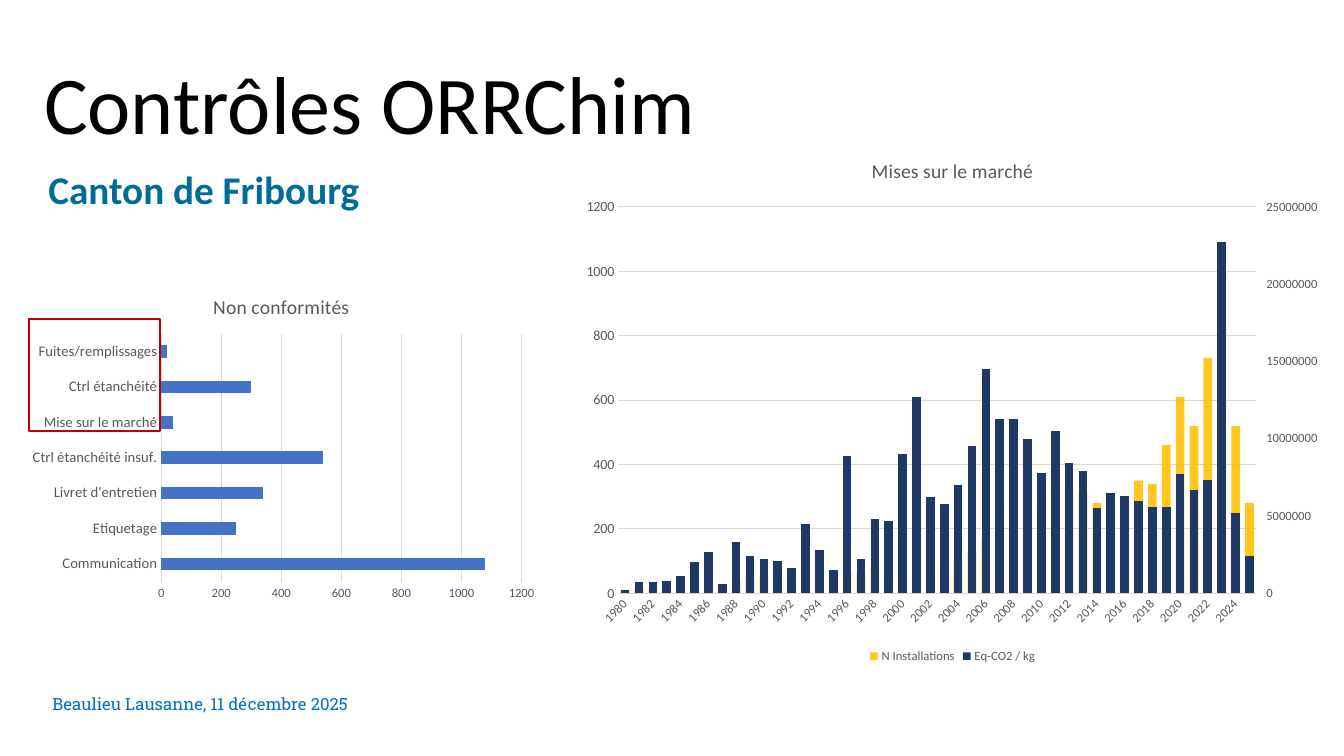
from copy import deepcopy
from dataclasses import dataclass

from pptx import Presentation
from pptx.chart.data import CategoryChartData as ChartData
from pptx.dml.color import RGBColor as RGB
from pptx.enum.chart import XL_CHART_TYPE as Kind, XL_LEGEND_POSITION as Spot, XL_TICK_MARK as Tick
from pptx.enum.shapes import MSO_SHAPE as Shape
from pptx.enum.text import MSO_ANCHOR as Anchor, MSO_AUTO_SIZE as Fit, PP_ALIGN as Align
from pptx.oxml import parse_xml
from pptx.oxml.ns import nsdecls
from pptx.util import Cm, Pt


@dataclass(frozen=True)
class Theme:
    """Colours, fonts and type sizes of the slide."""
    sans: str = "Calibri"
    slab: str = "Roboto Slab"
    black: str = "000000"
    teal: str = "006D94"
    sky: str = "0070C0"
    grey: str = "595959"
    grid: str = "D9D9D9"
    blue: str = "4472C4"
    gold: str = "FFC000"
    navy: str = "203864"
    red: str = "C00000"
    head: float = 58.6
    sub: float = 28
    chart: float = 14
    label: float = 10.5
    value: float = 10
    small: float = 9
    foot: float = 12


T = Theme()
FAULTS = {
    "Communication": 1080, "Etiquetage": 250, "Livret d'entretien": 340,
    "Ctrl étanchéité insuf.": 540, "Mise sur le marché": 40,
    "Ctrl étanchéité": 300, "Fuites/remplissages": 20,
}
YEARS = [str(year) for year in range(1980, 2026)]
UNITS = [
    10, 20, 10, 10, 20, 30, 20, 20, 40, 50, 50, 40, 40, 50, 60, 50,
    60, 60, 80, 60, 80, 90, 100, 90, 100, 130, 170, 220, 260, 270, 260,
    320, 330, 310, 280, 270, 290, 350, 340, 460, 610, 520, 730, 960, 520, 280,
]
TONS = [
    2, 7, 7, 8, 11, 20, 27, 6, 33, 24, 22, 21, 16, 45, 28, 15,
    89, 22, 48, 47, 90, 127, 62, 58, 70, 95, 145, 113, 113, 100, 78,
    105, 84, 79, 55, 65, 63, 60, 56, 56, 77, 67, 73, 227, 52, 24,
]


def style(font, size, tint, face=T.sans, bold=False):
    """Set face, size, colour and weight of a font."""
    font.name, font.size, font.bold = face, Pt(size), bold
    font.color.rgb = RGB.from_string(tint)


def place(item, box):
    """Move a shape to a box given in centimetres."""
    item.left, item.top, item.width, item.height = map(Cm, box)


def write(item, box, text, inset, *look):
    """Place a text shape and fill it with one styled paragraph."""
    place(item, box)
    frame = item.text_frame
    frame.text = text
    frame.word_wrap, frame.auto_size = True, Fit.NONE
    sides = [Cm(side) for side in inset]
    frame.margin_left, frame.margin_top, frame.margin_right, frame.margin_bottom = sides
    para = frame.paragraphs[0]
    para.alignment = Align.LEFT
    style(para.runs[0].font, *look)
    return para


def header(slide, box):
    """Fill the title and the subtitle from the top of the box."""
    x, y, w, h = box
    title, body = slide.placeholders
    para = write(title, box, "Contrôles ORRChim", (.25, .13, .25, .13), T.head, T.black)
    title.text_frame.vertical_anchor = Anchor.MIDDLE
    para.line_spacing = .9
    para = write(body, (x + .36, y + 3.4, w + 2.24, 2.16), "Canton de Fribourg",
                 (0, 0, 0, 0), T.sub, T.teal, T.sans, True)
    props = para._p.get_or_add_pPr()
    props.set("marL", "0")
    props.set("indent", "0")
    props.append(parse_xml(f"<a:buNone {nsdecls('a')}/>"))
    para.line_spacing, para.space_before, para.space_after = .9, Pt(0), Pt(6)


def footer(slide, box):
    """Write the place and date line."""
    item = slide.shapes.add_textbox(0, 0, 0, 0)
    write(item, box, "Beaulieu Lausanne, 11 décembre 2025", (.46, 0, 0, 0),
          T.foot, T.sky, T.slab)


def draw(slide, box, kind, data, title, plot, scale, sizes, gap, tints):
    """Add a bar chart with a title, a fixed plot area and styled axes."""
    chart = slide.shapes.add_chart(kind, *map(Cm, box), data).chart
    style(chart.font, T.value, T.black)
    chart.has_title, chart.has_legend = True, False
    chart.chart_title.include_in_layout = False
    frame = chart.chart_title.text_frame
    frame.text = title
    style(frame.paragraphs[0].runs[0].font, T.chart, T.grey)
    cats, vals = chart.category_axis, chart.value_axis
    for axis, size in zip((cats, vals), sizes):
        axis.major_tick_mark = axis.minor_tick_mark = Tick.NONE
        style(axis.tick_labels.font, size, T.grey)
    vals.minimum_scale, vals.maximum_scale, vals.major_unit = 0, *scale
    vals.format.line.fill.background()
    vals.has_major_gridlines = True
    for line in (cats.format.line, vals.major_gridlines.format.line):
        line.color.rgb, line.width = RGB.from_string(T.grid), Pt(.75)
    bars = chart.plots[0]
    bars.gap_width, bars.vary_by_categories = gap, False
    for row, tint in zip(bars.series, tints):
        row.format.fill.solid()
        row.format.fill.fore_color.rgb = RGB.from_string(tint)
        row.invert_if_negative = False
    area = chart._chartSpace.chart.plotArea
    for old in area.xpath("c:layout"):
        area.remove(old)
    spots = "".join(f'<c:{key} val="{val}"/>' for key, val in zip("xywh", plot))
    area.insert(0, parse_xml(
        f'<c:layout {nsdecls("c")}><c:manualLayout><c:layoutTarget val="inner"/>'
        f'<c:xMode val="edge"/><c:yMode val="edge"/>{spots}</c:manualLayout></c:layout>'))
    return chart


def faults(slide, box):
    """Chart the faults found and frame the top three labels."""
    data = ChartData()
    data.categories = list(FAULTS)
    data.add_series("Series 1", list(FAULTS.values()))
    draw(slide, box, Kind.BAR_CLUSTERED, data, "Non conformités",
         (.27, .17, .69, .76), (1200, 200), (T.label, T.small), 182, [T.blue])
    x, y, w, h = box
    mark = slide.shapes.add_shape(Shape.RECTANGLE, 0, 0, 0, 0)
    place(mark, (x + .23, y + 1.04, 3.3, 2.82))
    mark.shadow.inherit = False
    mark.fill.background()
    mark.line.color.rgb, mark.line.width = RGB.from_string(T.red), Pt(1.5)


def split(chart, top, step):
    """Move the last series of a chart to a second axis on the right."""
    area = chart._chartSpace.chart.plotArea
    bars, cats, vals = (area.xpath(f"c:{tag}")[0] for tag in ("barChart", "catAx", "valAx"))
    twin, base, right = map(deepcopy, (bars, cats, vals))
    bars.remove(bars.xpath("c:ser")[-1])
    twin.remove(twin.xpath("c:ser")[0])
    right.remove(right.xpath("c:majorGridlines")[0])
    ids = {"cat": "5001", "val": "5002"}
    for node, key in zip(twin.xpath("c:axId"), ids.values()):
        node.set("val", key)
    edits = (
        (base, "axId", ids["cat"]), (base, "crossAx", ids["val"]), (base, "delete", "1"),
        (right, "axId", ids["val"]), (right, "crossAx", ids["cat"]), (right, "axPos", "r"),
        (right, "crosses", "max"), (right, "majorTickMark", "out"),
        (right, "scaling/c:max", str(top)), (right, "majorUnit", str(step)),
    )
    for axis, tag, value in edits:
        axis.xpath(f"c:{tag}")[0].set("val", value)
    right.xpath(".//a:defRPr")[0].set("sz", str(int(T.small * 100)))
    bars.addnext(twin)
    vals.addnext(right)
    right.addnext(base)


def market(slide, box):
    """Chart the units and the CO2 load per year on two axes."""
    data = ChartData()
    data.categories = YEARS
    data.add_series("N Installations", UNITS)
    data.add_series("Eq-CO2 / kg", [ton * 100000 for ton in TONS])
    chart = draw(slide, box, Kind.COLUMN_CLUSTERED, data, "Mises sur le marché",
                 (.06, .13, .84, .73), (1200, 200), (T.small, T.value), 60, [T.gold, T.navy])
    chart.plots[0].overlap = 40
    chart.has_legend = True
    chart.legend.position, chart.legend.include_in_layout = Spot.BOTTOM, False
    style(chart.legend.font, T.small, T.grey)
    area = chart._chartSpace.chart.plotArea
    tint = area.xpath("c:barChart/c:ser[1]/c:spPr//a:srgbClr")[0]
    tint.append(parse_xml(f'<a:alpha {nsdecls("a")} val="88000"/>'))
    axis = area.xpath("c:catAx")[0]
    axis.xpath("c:txPr/a:bodyPr")[0].set("rot", "-2700000")
    axis.xpath("c:noMultiLvlLbl")[0].addprevious(
        parse_xml(f'<c:tickLblSkip {nsdecls("c")} val="2"/>'))
    split(chart, 25000000, 5000000)


def main():
    """Build the slide and save it."""
    deck = Presentation()
    deck.slide_width, deck.slide_height = Cm(33.87), Cm(19.05)
    slide = deck.slides.add_slide(deck.slide_layouts[1])
    header(slide, (.86, .89, 29.21, 3.68))
    footer(slide, (.86, 17.48, 9.55, .69))
    faults(slide, (.51, 7.01, 13.16, 8.23))
    market(slide, (14.43, 3.48, 19.15, 13.34))
    deck.save("out.pptx")


if __name__ == "__main__":
    main()
